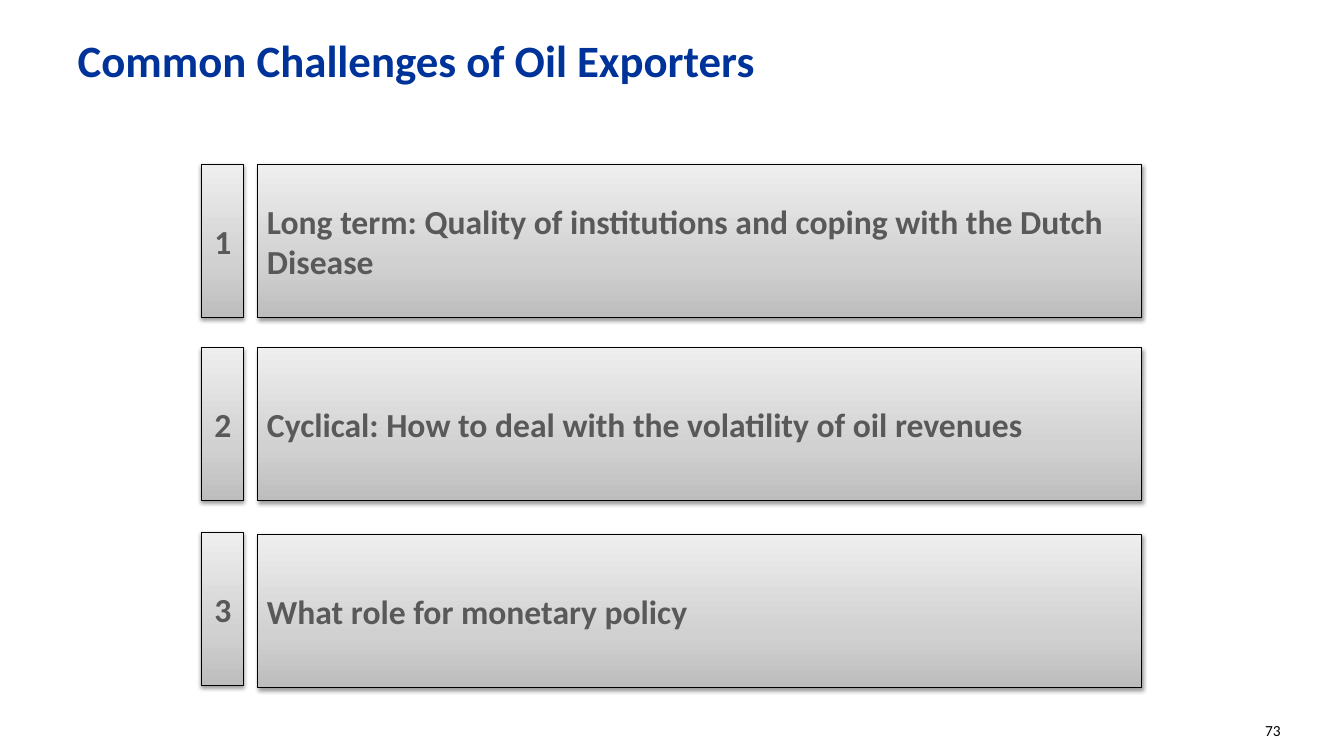
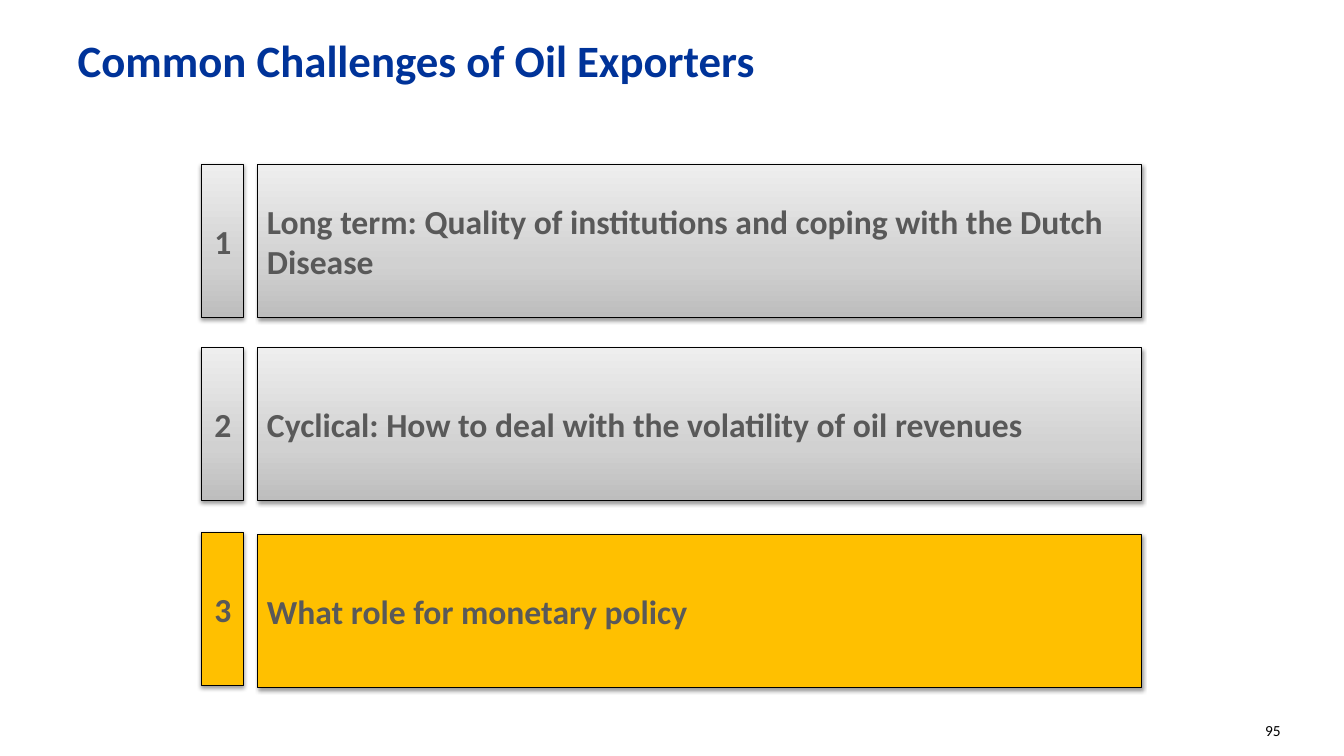
from copy import deepcopy

from lxml import etree
from pptx import Presentation
from pptx.dml.color import RGBColor
from pptx.enum.shapes import MSO_SHAPE
from pptx.enum.text import MSO_ANCHOR, PP_ALIGN
from pptx.oxml.ns import qn
from pptx.util import Inches, Pt

RECT = MSO_SHAPE.RECTANGLE
MIDDLE = MSO_ANCHOR.MIDDLE
LEFT, CENTER, RIGHT = PP_ALIGN.LEFT, PP_ALIGN.CENTER, PP_ALIGN.RIGHT

FONT = "Calibri"
BLUE, BLACK, GRAY, AMBER = "003399", "000000", "595959", "FFC000"
SHADES = ((0, "BDBDBD"), (0.35, "D1D1D1"), (1, "EEEEEE"))

TITLE = "Common Challenges of Oil Exporters"
# Text, number offset and label offset from the top of the list
ROWS = (
    ("Long term: Quality of institutions and coping with the Dutch Disease", 0, 0),
    ("Cyclical: How to deal with the volatility of oil revenues", 1.82, 1.82),
    ("What role for monetary policy", 3.65, 3.67),
)
ROW_H, NUM_W, GAP = 1.52, 0.42, 0.13


def color(code):
    return RGBColor.from_string(code)


def inches(*box):
    return [Inches(size) for size in box]


def write(frame, text, size, code, align, bold=False):
    frame.text = text
    para = frame.paragraphs[0]
    para.alignment = align
    font = para.font
    font.name, font.size, font.bold = FONT, Pt(size), bold
    font.color.rgb = color(code)


def shade(shape):
    """Fill with a gradient that runs from dark at the bottom to light."""
    fill = shape.fill
    fill.gradient()
    fill.gradient_angle = 90
    stops = shape._element.spPr.find(".//" + qn("a:gsLst"))
    stops.insert(1, deepcopy(stops[0]))
    for stop, (place, code) in zip(fill.gradient_stops, SHADES):
        stop.position = place
        stop.color.rgb = color(code)


def cast(shape):
    """Add a soft shadow below the shape."""
    shape.shadow.inherit = False
    effects = shape._element.spPr.find(qn("a:effectLst"))
    outer = etree.SubElement(effects, qn("a:outerShdw"), blurRad=str(Pt(3.1)),
                             dist=str(Pt(1.6)), dir="5400000", rotWithShape="0")
    black = etree.SubElement(outer, qn("a:srgbClr"), val=BLACK)
    etree.SubElement(black, qn("a:alpha"), val="38000")


def panel(slide, box, text, align, wrap, active):
    shape = slide.shapes.add_shape(RECT, *inches(*box))
    if active:
        shape.fill.solid()
        shape.fill.fore_color.rgb = color(AMBER)
    else:
        shade(shape)
    shape.line.color.rgb = color(BLACK)
    shape.line.width = Pt(0.75)
    cast(shape)
    frame = shape.text_frame
    frame.word_wrap = wrap
    frame.vertical_anchor = MIDDLE
    write(frame, text, 24, GRAY, align, bold=True)


def agenda(slide, left, top, width, active):
    """Stack the numbered rows and highlight the active one."""
    indent = NUM_W + GAP
    for num, (text, num_y, text_y) in enumerate(ROWS, 1):
        lit = num == active
        panel(slide, (left, top + num_y, NUM_W, ROW_H), str(num), CENTER, False, lit)
        panel(slide, (left + indent, top + text_y, width - indent, ROW_H),
              text, LEFT, True, lit)


def header(slide):
    title = slide.shapes.title
    title.left, title.top, title.width, title.height = inches(0.67, 0.2, 12, 0.79)
    title.text_frame.vertical_anchor = MIDDLE
    write(title.text_frame, TITLE, 32, BLUE, LEFT, bold=True)


def footer(slide, page):
    box = slide.shapes.add_textbox(*inches(9.69, 7.1, 3.11, 0.29))
    box.text_frame.word_wrap = True
    write(box.text_frame, str(page), 11, BLACK, RIGHT)


def main():
    deck = Presentation()
    deck.slide_width, deck.slide_height = inches(13.33, 7.5)
    for page, active in ((73, None), (95, 3)):
        slide = deck.slides.add_slide(deck.slide_layouts[5])
        header(slide)
        footer(slide, page)
        agenda(slide, 2, 1.63, 9.32, active)
    deck.save("out.pptx")


if __name__ == "__main__":
    main()
